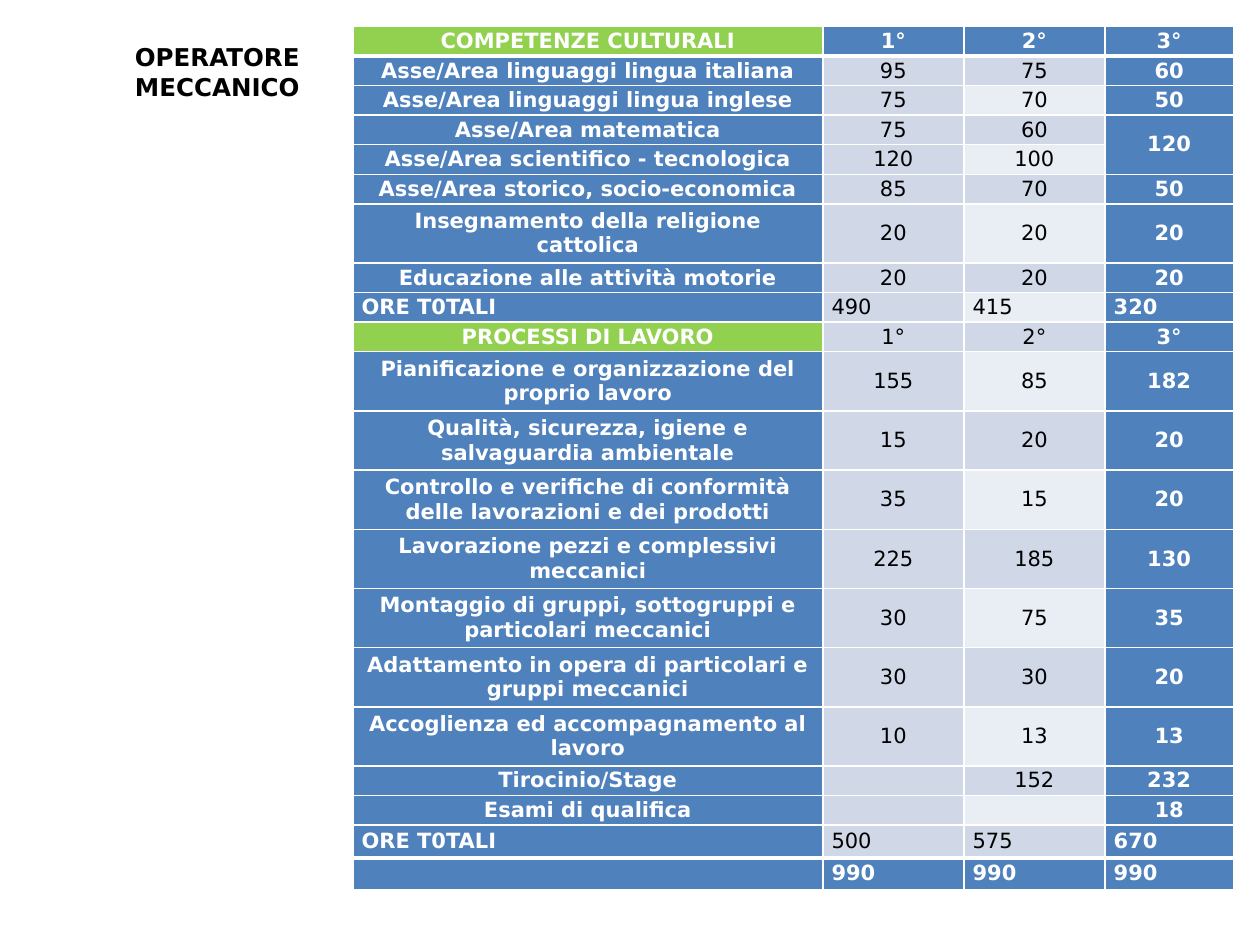
import dataclasses

import pptx
import pptx.dml.color
import pptx.enum.text
import pptx.oxml
import pptx.oxml.ns
import pptx.util

Inches = pptx.util.Inches
Pt = pptx.util.Pt
RGBColor = pptx.dml.color.RGBColor
Align = pptx.enum.text.PP_ALIGN
Anchor = pptx.enum.text.MSO_ANCHOR


@dataclasses.dataclass(frozen=True)
class Theme:
    font: str = "DejaVu Sans"
    title_size: int = 14
    table_size: int = 12
    dark_text: str = "000000"
    light_text: str = "FFFFFF"
    border: str = "FFFFFF"
    section: str = "92D050"
    accent: str = "4F81BD"
    band_dark: str = "D0D8E8"
    band_light: str = "E9EDF4"
    thin: int = 1
    thick: int = 3


TOTAL = "ORE T0TALI"
SECTIONS = ("COMPETENZE CULTURALI", "PROCESSI DI LAVORO")
HOURS = [
    (SECTIONS[0], "1°", "2°", "3°"),
    ("Asse/Area linguaggi lingua italiana", "95", "75", "60"),
    ("Asse/Area linguaggi lingua inglese", "75", "70", "50"),
    ("Asse/Area matematica", "75", "60", "120"),
    ("Asse/Area scientifico - tecnologica", "120", "100", ""),
    ("Asse/Area storico, socio-economica", "85", "70", "50"),
    ("Insegnamento della religione cattolica", "20", "20", "20"),
    ("Educazione alle attività motorie", "20", "20", "20"),
    (TOTAL, "490", "415", "320"),
    (SECTIONS[1], "1°", "2°", "3°"),
    ("Pianificazione e organizzazione del proprio lavoro", "155", "85", "182"),
    ("Qualità, sicurezza, igiene e salvaguardia ambientale", "15", "20", "20"),
    ("Controllo e verifiche di conformità delle lavorazioni e dei prodotti", "35", "15", "20"),
    ("Lavorazione pezzi e complessivi meccanici", "225", "185", "130"),
    ("Montaggio di gruppi, sottogruppi e particolari meccanici", "30", "75", "35"),
    ("Adattamento in opera di particolari e gruppi meccanici", "30", "30", "20"),
    ("Accoglienza ed accompagnamento al lavoro", "10", "13", "13"),
    ("Tirocinio/Stage", "", "152", "232"),
    ("Esami di qualifica", "", "", "18"),
    (TOTAL, "500", "575", "670"),
    ("", "990", "990", "990"),
]
LAST_ROW = len(HOURS) - 1
COLUMN_WIDTHS = (3.73, 1.12, 1.12, 1.02)
TWO_LINES = 0.47
WRAP_LENGTH = 36  # longer labels take two lines
FOOTER_HEIGHTS = {LAST_ROW - 1: 0.26, LAST_ROW: 0.25}
MERGED_ROWS = (3, 4)


class SlideBuilder:
    def __init__(self, slide, theme):
        self.slide = slide
        self.theme = theme

    def format_text(self, text_frame, size, color, bold, alignment):
        for paragraph in text_frame.paragraphs:
            paragraph.alignment = alignment
            for run in paragraph.runs:
                run.font.name = self.theme.font
                run.font.size = Pt(size)
                run.font.bold = bold
                run.font.color.rgb = RGBColor.from_string(color)

    def add_title(self, text, left, top, width, height):
        title = self.slide.shapes.title
        title.left, title.top = Inches(left), Inches(top)
        title.width, title.height = Inches(width), Inches(height)
        title.text_frame.text = text
        title.text_frame.word_wrap = True
        title.text_frame.vertical_anchor = Anchor.MIDDLE
        self.format_text(title.text_frame, self.theme.title_size,
                         self.theme.dark_text, True, Align.CENTER)

    def add_borders(self, cell, row):
        """Draw all four borders; the first and last rows are set off by a thick one."""
        theme = self.theme
        widths = {"lnL": theme.thin, "lnR": theme.thin,
                  "lnT": theme.thick if row in (1, LAST_ROW) else theme.thin,
                  "lnB": theme.thick if row in (0, LAST_ROW - 1) else theme.thin}
        properties = cell._tc.get_or_add_tcPr()
        for side, width in widths.items():
            properties.append(pptx.oxml.parse_xml(
                f'<a:{side} {pptx.oxml.ns.nsdecls("a")} w="{Pt(width)}">'
                f'<a:solidFill><a:srgbClr val="{theme.border}"/></a:solidFill></a:{side}>'))

    def fill_color(self, row, column):
        theme = self.theme
        if column == 0 and HOURS[row][0] in SECTIONS:
            return theme.section
        if column in (0, 3) or row in (0, LAST_ROW):
            return theme.accent
        return theme.band_light if column == 2 and row % 2 == 0 else theme.band_dark

    def format_cell(self, cell, row, column):
        theme = self.theme
        cell.text_frame.text = HOURS[row][column]
        cell.vertical_anchor = Anchor.MIDDLE
        cell.margin_left = cell.margin_right = Inches(0.07)
        cell.margin_top = cell.margin_bottom = 0
        emphasised = column in (0, 3) or row in (0, LAST_ROW)
        totals = HOURS[row][0] == TOTAL or row == LAST_ROW
        self.format_text(cell.text_frame, theme.table_size,
                         theme.light_text if emphasised else theme.dark_text,
                         emphasised, Align.LEFT if totals else Align.CENTER)
        if not HOURS[row][column]:
            # An empty cell would otherwise grow the row to the default type size.
            cell.text_frame.paragraphs[0]._p.append(pptx.oxml.parse_xml(
                f'<a:endParaRPr {pptx.oxml.ns.nsdecls("a")} sz="{theme.table_size * 100}"/>'))
        self.add_borders(cell, row)
        cell.fill.solid()
        cell.fill.fore_color.rgb = RGBColor.from_string(self.fill_color(row, column))

    def add_hours_table(self, left, top):
        heights = [FOOTER_HEIGHTS.get(row, TWO_LINES if len(values[0]) > WRAP_LENGTH
                                      else TWO_LINES / 2)
                   for row, values in enumerate(HOURS)]
        table = self.slide.shapes.add_table(
            len(HOURS), len(COLUMN_WIDTHS), Inches(left), Inches(top),
            Inches(sum(COLUMN_WIDTHS)), Inches(sum(heights))).table
        for column, width in zip(table.columns, COLUMN_WIDTHS):
            column.width = Inches(width)
        for row, height in enumerate(heights):
            table.rows[row].height = Inches(height)
            for column in range(len(COLUMN_WIDTHS)):
                self.format_cell(table.cell(row, column), row, column)
        first, last = MERGED_ROWS
        table.cell(first, 3).merge(table.cell(last, 3))


def main():
    presentation = pptx.Presentation()
    presentation.slide_width, presentation.slide_height = Inches(10), Inches(7.5)
    slide = presentation.slides.add_slide(
        presentation.slide_layouts.get_by_name("Title Only"))
    builder = SlideBuilder(slide, Theme())
    builder.add_title("OPERATORE MECCANICO", 0.5, 0.3, 2.45, 0.54)
    builder.add_hours_table(2.8, 0.21)
    presentation.save("out.pptx")


if __name__ == "__main__":
    main()
